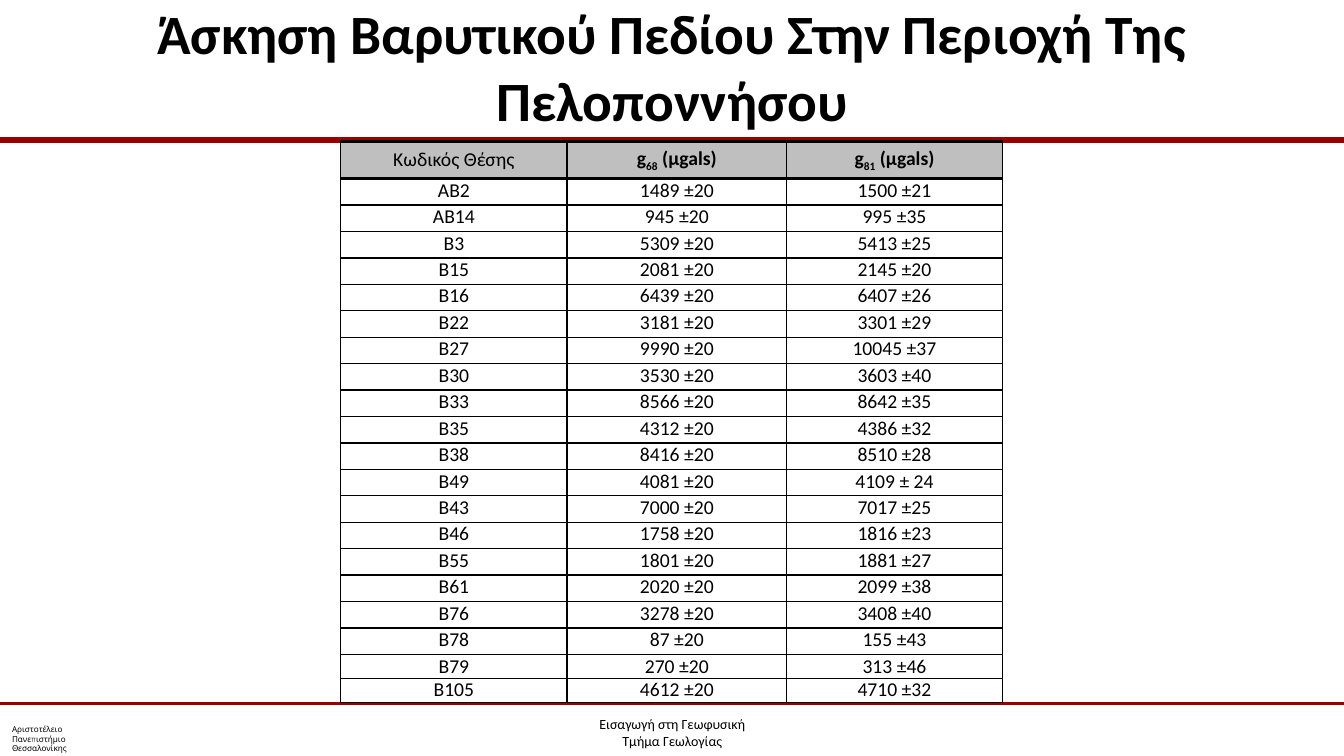
from lxml.etree import SubElement
from pptx import Presentation
from pptx.dml.color import RGBColor
from pptx.enum.shapes import MSO_CONNECTOR
from pptx.enum.text import MSO_ANCHOR, MSO_AUTO_SIZE, PP_ALIGN
from pptx.oxml.ns import qn
from pptx.util import Pt

WIDTH, HEIGHT = 960, 540
BLACK, RED, GREY = "000000", "990000", "BFBFBF"
COLUMN_WIDTHS = [161.5, 157, 154]
ROW_HEIGHTS = [26.6] + [18.9] * 18 + [17.1] * 2
HEADERS = [("Κωδικός Θέσης",), ("g", "68", " (μgals)"), ("g", "81", " (μgals)")]
STATIONS = [
    ("ΑΒ2", "1489 ±20", "1500 ±21"),
    ("ΑΒ14", "945 ±20", "995 ±35"),
    ("Β3", "5309 ±20", "5413 ±25"),
    ("Β15", "2081 ±20", "2145 ±20"),
    ("Β16", "6439 ±20", "6407 ±26"),
    ("Β22", "3181 ±20", "3301 ±29"),
    ("Β27", "9990 ±20", "10045 ±37"),
    ("Β30", "3530 ±20", "3603 ±40"),
    ("Β33", "8566 ±20", "8642 ±35"),
    ("Β35", "4312 ±20", "4386 ±32"),
    ("Β38", "8416 ±20", "8510 ±28"),
    ("Β49", "4081 ±20", "4109 ± 24"),
    ("Β43", "7000 ±20", "7017 ±25"),
    ("Β46", "1758 ±20", "1816 ±23"),
    ("Β55", "1801 ±20", "1881 ±27"),
    ("Β61", "2020 ±20", "2099 ±38"),
    ("Β76", "3278 ±20", "3408 ±40"),
    ("Β78", "87 ±20", "155 ±43"),
    ("Β79", "270 ±20", "313 ±46"),
    ("Β105", "4612 ±20", "4710 ±32"),
]


def rgb(color):
    return RGBColor.from_string(color)


def format_run(r, size, font="Calibri", bold=False):
    r.font.size = Pt(size)
    r.font.name = font
    r.font.bold = bold
    r.font.color.rgb = rgb(BLACK)


def place(sp, left, top, width, height):
    sp.left, sp.top, sp.width, sp.height = map(Pt, (left, top, width, height))


def add_title(s, text):
    sp = s.shapes.title
    place(sp, 48, 2, 864, 90)
    tf = sp.text_frame
    tf.text = text
    tf.auto_size = MSO_AUTO_SIZE.NONE
    tf.vertical_anchor = MSO_ANCHOR.MIDDLE
    p = tf.paragraphs[0]
    p.alignment = PP_ALIGN.CENTER
    format_run(p.runs[0], 39.6, bold=True)


def add_rule(s, y, weight):
    line = s.shapes.add_connector(MSO_CONNECTOR.STRAIGHT, 0, Pt(y), Pt(WIDTH), Pt(y))
    line.line.color.rgb = rgb(RED)
    line.line.width = Pt(weight)
    SubElement(line._element.spPr, qn("a:effectLst"))


def add_text(s, box, lines, size, font="Calibri", align=PP_ALIGN.LEFT):
    tf = s.shapes.add_textbox(*map(Pt, box)).text_frame
    tf.word_wrap = True
    tf.text = "\n".join(lines)
    for p in tf.paragraphs:
        p.alignment = align
        format_run(p.runs[0], size, font)
    return tf


def set_borders(cell, top, bottom):
    tcPr = cell._tc.get_or_add_tcPr()
    weights = {"a:lnL": 1, "a:lnR": 1, "a:lnT": top, "a:lnB": bottom}
    for tag, weight in weights.items():
        ln = SubElement(tcPr, qn(tag), w=str(Pt(weight)))
        fill = SubElement(ln, qn("a:solidFill"))
        SubElement(fill, qn("a:srgbClr"), val=BLACK)


def fill_cell(cell, parts, is_header):
    """Write the parts as runs; the second part is a subscript."""
    cell.margin_top = cell.margin_bottom = 0
    cell.vertical_anchor = MSO_ANCHOR.MIDDLE if is_header else MSO_ANCHOR.TOP
    p = cell.text_frame.paragraphs[0]
    p.alignment = PP_ALIGN.CENTER
    for i, part in enumerate(parts):
        r = p.add_run()
        r.text = part
        format_run(r, 14, bold=len(parts) > 1)
        if i == 1:
            r.font._element.set("baseline", "-25000")


def add_gravity_table(s):
    rows = [HEADERS] + [[(value,) for value in station] for station in STATIONS]
    frame = s.shapes.add_table(len(rows), len(HEADERS), Pt(243.5), Pt(101),
                               Pt(sum(COLUMN_WIDTHS)), Pt(sum(ROW_HEIGHTS)))
    table = frame.table
    table.horz_banding = False
    for column, width in zip(table.columns, COLUMN_WIDTHS):
        column.width = Pt(width)
    for i, (row, height, values) in enumerate(zip(table.rows, ROW_HEIGHTS, rows)):
        row.height = Pt(height)
        for cell, parts in zip(row.cells, values):
            fill_cell(cell, parts, i == 0)
            set_borders(cell, 2.25 if i < 2 else 1, 2.25 if i == 0 else 1)
            if i == 0:
                cell.fill.solid()
                cell.fill.fore_color.rgb = rgb(GREY)
            else:
                cell.fill.background()


def main():
    prs = Presentation()
    prs.slide_width, prs.slide_height = Pt(WIDTH), Pt(HEIGHT)
    s = prs.slides.add_slide(prs.slide_layouts[5])
    add_rule(s, 100, 4)
    add_rule(s, 502.5, 2)
    university = add_text(s, (1.5, 515.5, 75.5, 24.5),
                          ["Αριστοτέλειο", "Πανεπιστήμιο", "Θεσσαλονίκης"],
                          5.8, "Quicksand")
    university.vertical_anchor = MSO_ANCHOR.MIDDLE
    footer = add_text(s, (329, 497, 302.5, 43),
                      ["Εισαγωγή στη Γεωφυσική", "Τμήμα Γεωλογίας"],
                      10, align=PP_ALIGN.CENTER)
    footer.margin_top = footer.margin_bottom = 0
    footer.paragraphs[0].line_spacing = 2.2
    add_gravity_table(s)
    add_title(s, "Άσκηση Βαρυτικού Πεδίου Στην Περιοχή Της Πελοποννήσου")
    prs.save("out.pptx")


if __name__ == "__main__":
    main()
